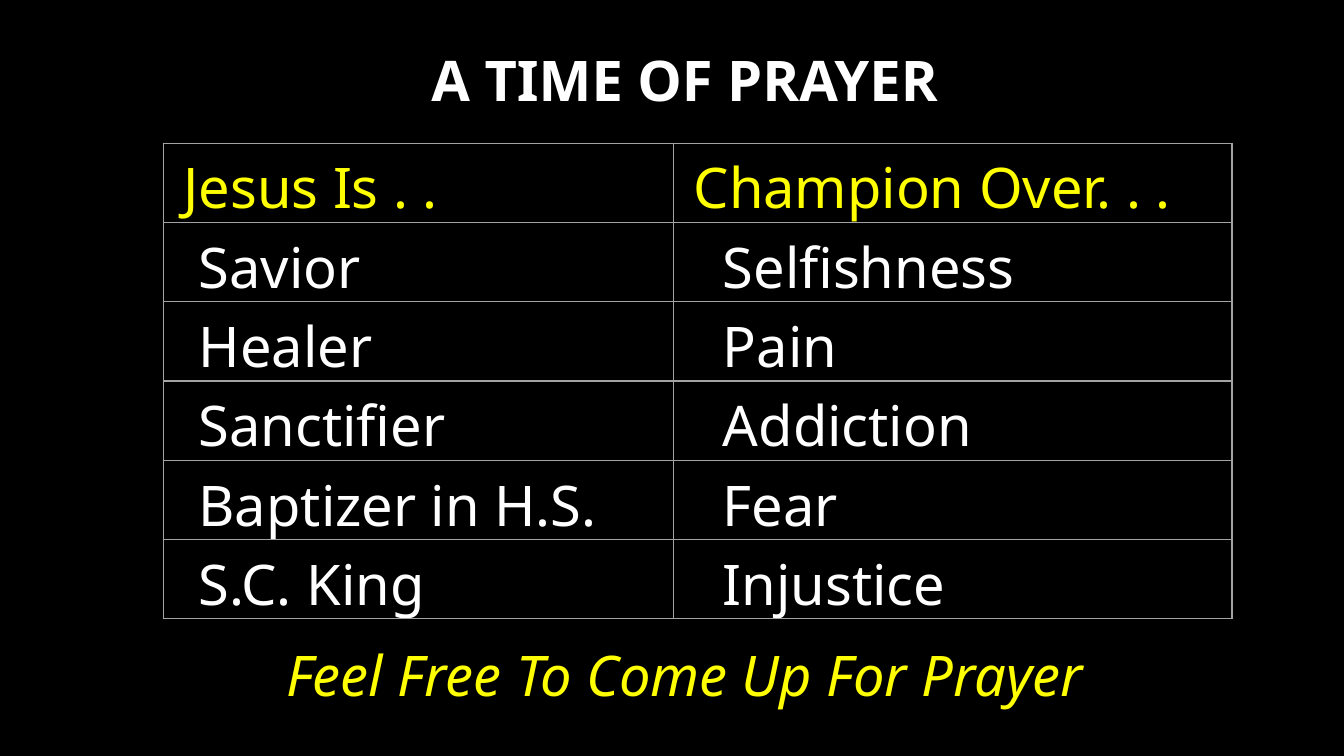
import pptx
import pptx.dml.color
import pptx.enum.text
import pptx.oxml
import pptx.util
from lxml import etree

Inches = pptx.util.Inches
Pt = pptx.util.Pt

WHITE, YELLOW, BLACK, GREY = "FFFFFF", "FFFF00", "000000", "A3A3A3"
ROWS = [
    ("Jesus Is . .", "Champion Over. . ."),
    ("Savior", "Selfishness"),
    ("Healer", "Pain"),
    ("Sanctifier", "Addiction"),
    ("Baptizer in H.S.", "Fear"),
    ("S.C. King", "Injustice"),
]
HEADER_INDENTS = (0.2, 0.2)
BODY_INDENTS = (0.35, 0.49)


def color(value):
    return pptx.dml.color.RGBColor.from_string(value)


def write(tf, text, size=40, font="Noto Sans", fill=WHITE, bold=False,
          italic=False, align=pptx.enum.text.PP_ALIGN.LEFT):
    p = tf.paragraphs[0]
    p.alignment = align
    r = p.add_run()
    r.text = text
    r.font.size = Pt(size)
    r.font.name = font
    r.font.bold = bold
    r.font.italic = italic
    r.font.color.rgb = color(fill)


def set_borders(cell, value, width):
    tc_pr = cell._tc.get_or_add_tcPr()
    ns = pptx.oxml.ns.qn
    for i, side in enumerate(("a:lnL", "a:lnR", "a:lnT", "a:lnB")):
        ln = etree.Element(ns(side), w=str(Pt(width)))
        fill = etree.SubElement(ln, ns("a:solidFill"))
        etree.SubElement(fill, ns("a:srgbClr"), val=value)
        tc_pr.insert(i, ln)


class PrayerSlide:
    def __init__(self, prs, background):
        self.slide = prs.slides.add_slide(prs.slide_layouts[6])
        fill = self.slide.background.fill
        fill.solid()
        fill.fore_color.rgb = color(background)

    def line_of_text(self, text, top, **style):
        sp = self.slide.shapes.add_textbox(
            Inches(0.62), Inches(top), Inches(12.34), Inches(0.77))
        sp.text_frame.word_wrap = True
        write(sp.text_frame, text, align=pptx.enum.text.PP_ALIGN.CENTER, **style)

    def table(self, rows, left, top, widths, height):
        table = self.slide.shapes.add_table(
            len(rows), len(widths), Inches(left), Inches(top),
            Inches(sum(widths)), Inches(height)).table
        for column, width in zip(table.columns, widths):
            column.width = Inches(width)
        for i, row in enumerate(rows):
            indents = BODY_INDENTS if i else HEADER_INDENTS
            for j, text in enumerate(row):
                self.cell(table.cell(i, j), text, indents[j],
                          WHITE if i else YELLOW)

    def cell(self, cell, text, indent, fill):
        cell.margin_left = Inches(indent)
        cell.margin_right = cell.margin_top = cell.margin_bottom = Inches(0.06)
        cell.fill.solid()
        cell.fill.fore_color.rgb = color(BLACK)
        write(cell.text_frame, text, fill=fill)
        set_borders(cell, GREY, 1)


def main():
    prs = pptx.Presentation()
    prs.slide_width, prs.slide_height = Inches(13.33), Inches(7.5)
    page = PrayerSlide(prs, BLACK)

    # Title
    page.line_of_text("A TIME OF PRAYER", 0.4, bold=True)

    # Two-column list
    page.table(ROWS, 1.62, 1.42, (5.06, 5.54), 4.67)

    # Invitation
    page.line_of_text("Feel Free To Come Up For Prayer", 6.31,
                      fill=YELLOW, italic=True)

    prs.save("out.pptx")


if __name__ == "__main__":
    main()
